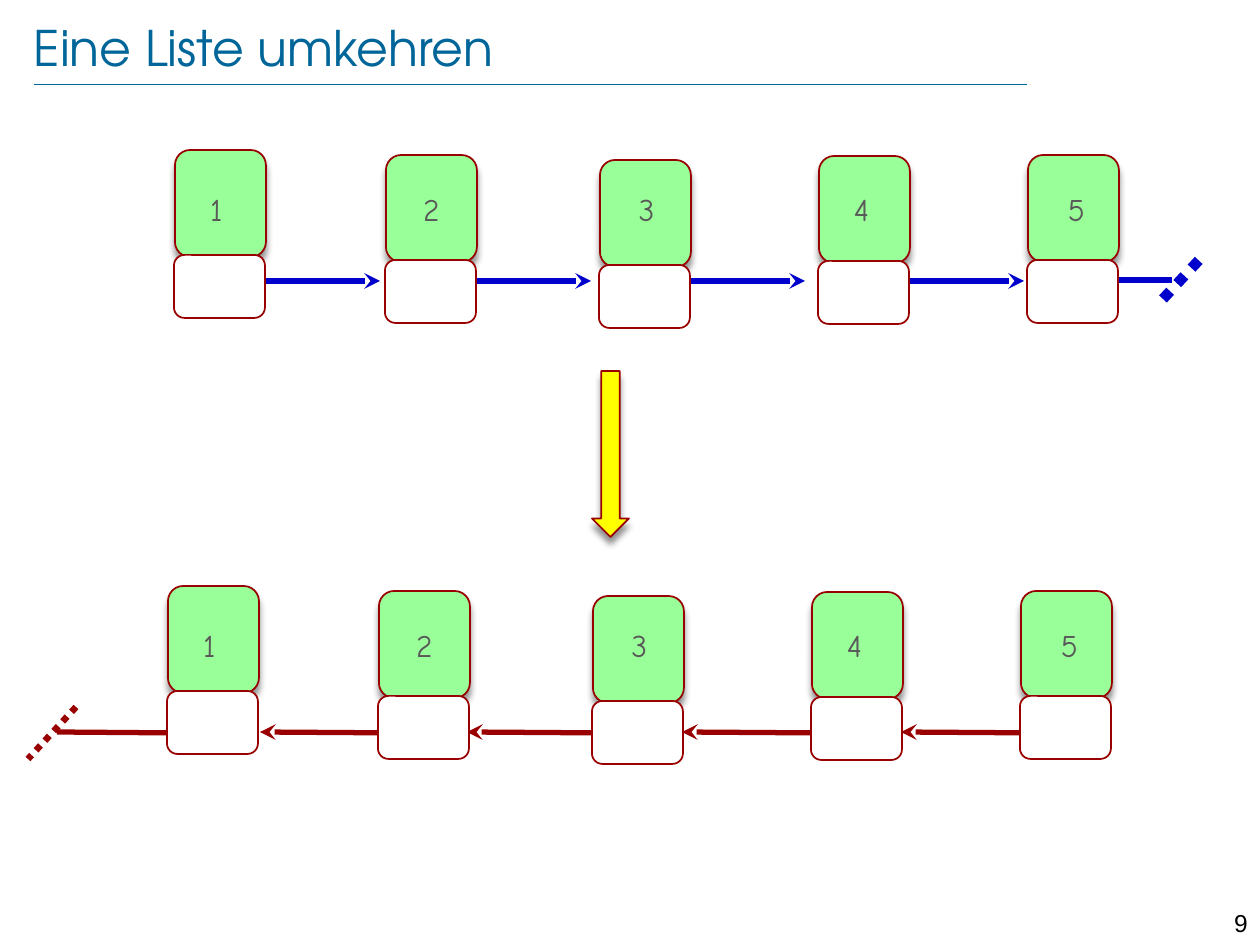
from lxml import etree
from pptx import Presentation
from pptx import util as u
from pptx.dml.color import RGBColor
from pptx.enum import dml, shapes, text
from pptx.oxml.ns import qn

PX = 914400 / 126
BLUE, RED, TEAL = "0000CC", "990000", "006699"
GREEN, YELLOW, WHITE = "99FF99", "FFFF00", "FFFFFF"
hue = RGBColor.from_string

deck = Presentation()
deck.slide_width, deck.slide_height = u.Inches(10), u.Inches(7.5)
slide = deck.slides.add_slide(deck.slide_layouts[6])


def wire(ends, tint, width, dash=None, tail=False):
    link = slide.shapes.add_connector(
        shapes.MSO_CONNECTOR.STRAIGHT, *[round(v * PX) for v in ends])
    link.line.color.rgb = hue(tint)
    link.line.width = u.Pt(width)
    if dash:
        link.line.dash_style = dash
    if tail:
        etree.SubElement(link.line._get_or_add_ln(), qn("a:tailEnd"),
                         type="stealth", w="med", len="med")
    etree.SubElement(link._element.spPr, qn("a:effectLst"))


def label(words, place, font, tint, frame, align):
    box = slide.shapes.add_textbox(*[round(v * PX) for v in place])
    form = {"word_wrap": True, "margin_left": 0, "margin_right": 0,
            "margin_top": 0, "margin_bottom": 0} | frame
    for name, value in form.items():
        setattr(box.text_frame, name, value)
    para = box.text_frame.paragraphs[0]
    para.alignment = align
    run = para.add_run()
    run.text = words
    for name, value in font.items():
        setattr(run.font, name, value)
    run.font.color.rgb = hue(tint)
    return para


mid = {"vertical_anchor": text.MSO_ANCHOR.MIDDLE}
wire((34, 84, 1027, 84), TEAL, 0.25)
label("Eine Liste umkehren", (34, 16, 1095, 61),
      {"name": "TeX Gyre Adventor", "size": u.Pt(28)}, TEAL, mid,
      text.PP_ALIGN.LEFT)
label("9", (1191, 902, 69, 30), {"name": "Arial", "size": u.Pt(14)}, "000000",
      {"margin_top": u.Inches(0.05), "margin_right": u.Inches(0.1)},
      text.PP_ALIGN.RIGHT)

nodes = [(175, 150), (386, 155), (600, 160), (819, 156), (1028, 155)]
rows = [(0, 0), (-7, 436)]
dots = dml.MSO_LINE.ROUND_DOT

for x, y in nodes[:-1]:
    wire((x + 66, 281, x + 205, 281), BLUE, 3, tail=True)
wire((1097, 280, 1172, 280), BLUE, 3)
wire((1163, 299, 1201, 258), BLUE, 6, dots)

wire((76, 707, 28, 759), RED, 3.75, dots)
wire((185, 733, 57, 732), RED, 3)
for x in (407, 614, 829, 1048):
    wire((x, 733, x - 147, 732), RED, 3, tail=True)

kind = shapes.MSO_SHAPE
parts = [(kind.DOWN_ARROW, (592, 371, 37, 166), YELLOW)]
for dx, dy in rows:
    for x, y in nodes:
        parts += [
            (kind.ROUNDED_RECTANGLE, (x + dx, y + dy, 91, 107), GREEN),
            (kind.ROUNDED_RECTANGLE, (x + dx - 1, y + dy + 105, 91, 63), WHITE),
        ]

for form, place, tint in parts:
    part = slide.shapes.add_shape(form, *[round(v * PX) for v in place])
    part.fill.solid()
    part.fill.fore_color.rgb = hue(tint)
    part.line.color.rgb = hue(RED)
    part.line.width = u.Pt(1)
    part.shadow.inherit = False
    if tint != WHITE:
        glow = etree.SubElement(
            part._element.spPr.find(qn("a:effectLst")), qn("a:outerShdw"),
            blurRad="50800", dist="50800", dir="5400000", rotWithShape="0")
        shade = etree.SubElement(glow, qn("a:srgbClr"), val="000000")
        etree.SubElement(shade, qn("a:alpha"), val="43000")

for dx, dy in rows:
    for i in range(len(nodes)):
        para = label(str(i + 1), (197 + 215 * i + dx, 186 + dy, 39, 53),
                     {"name": "Comic Neue", "size": u.Pt(18)}, "595959", mid,
                     text.PP_ALIGN.CENTER)
        para.line_spacing = 0.8

deck.save("out.pptx")
